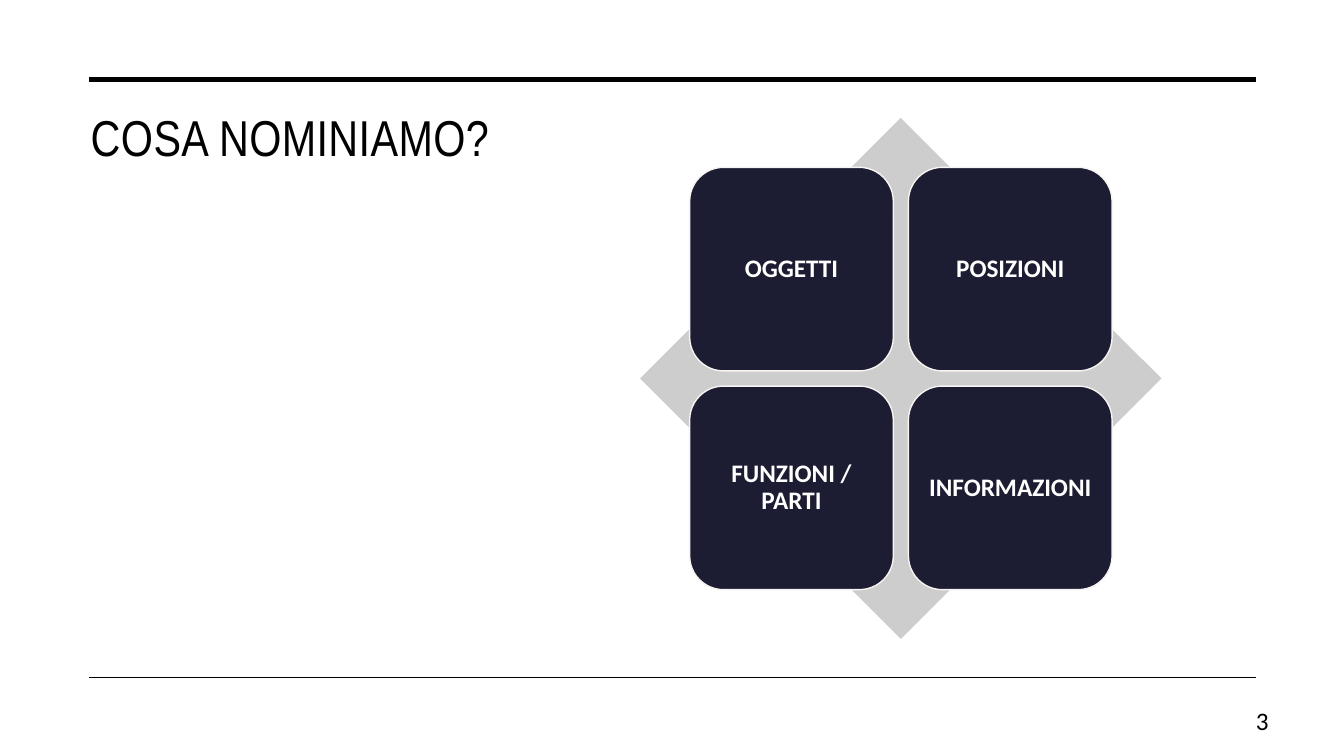
"""Build the slide on the four kinds of things we name."""
from pptx import Presentation
from pptx.dml.color import RGBColor
from pptx.enum import shapes as sh, text as tx
from pptx.oxml.ns import qn
from pptx.util import Inches, Pt
from lxml import etree

BLACK = RGBColor(0x00, 0x00, 0x00)
WHITE = RGBColor(0xFF, 0xFF, 0xFF)
GREY = RGBColor(0xCD, 0xCD, 0xCE)
NAVY = RGBColor(0x1C, 0x1C, 0x32)
CREAM = RGBColor(0xF8, 0xF4, 0xF1)


def write(frame, words, size, face, color, align, bold=False):
    frame.word_wrap = True
    frame.vertical_anchor = tx.MSO_ANCHOR.MIDDLE
    para = frame.paragraphs[0]
    para.alignment = align
    run = para.add_run()
    run.text = words
    run.font.size = Pt(size)
    run.font.name = face
    run.font.bold = bold
    run.font.color.rgb = color
    return run


deck = Presentation()
deck.slide_width = Inches(13.33)
deck.slide_height = Inches(7.5)
slide = deck.slides.add_slide(deck.slide_layouts[5])

title = slide.shapes.title
title.left, title.top = Inches(0.8), Inches(0.99)
title.width, title.height = Inches(5.28), Inches(0.73)
run = write(title.text_frame, "COSA NOMINIAMO?", 36, "Arial Narrow", BLACK,
            tx.PP_ALIGN.LEFT)
run.font._element.set("spc", "30")

for y, width in ((0.79, 3.5), (6.72, 1)):
    rule = slide.shapes.add_connector(
        sh.MSO_CONNECTOR.STRAIGHT,
        Inches(0.88), Inches(y), Inches(12.46), Inches(y))
    rule.line.color.rgb = BLACK
    rule.line.width = Pt(width)
    etree.SubElement(rule._element.spPr, qn("a:effectLst"))

diamond = slide.shapes.add_shape(
    sh.MSO_SHAPE.DIAMOND,
    Inches(6.35), Inches(1.17), Inches(5.17), Inches(5.17))
diamond.shadow.inherit = False
diamond.fill.solid()
diamond.fill.fore_color.rgb = GREY
diamond.line.fill.background()

topics = ("OGGETTI", "POSIZIONI", "FUNZIONI / PARTI", "INFORMAZIONI")
side, step = 2.02, 2.17
for i, topic in enumerate(topics):
    row, col = divmod(i, 2)
    card = slide.shapes.add_shape(
        sh.MSO_SHAPE.ROUNDED_RECTANGLE,
        Inches(6.84 + col * step), Inches(1.66 + row * step),
        Inches(side), Inches(side))
    card.shadow.inherit = False
    card.fill.solid()
    card.fill.fore_color.rgb = NAVY
    card.line.color.rgb = CREAM
    card.line.width = Pt(1)
    frame = card.text_frame
    frame.margin_left = frame.margin_right = Inches(0.07)
    frame.margin_top = frame.margin_bottom = Inches(0.07)
    write(frame, topic, 18, "Calibri", WHITE, tx.PP_ALIGN.CENTER, True)
    frame.paragraphs[0].line_spacing = 0.9

number = slide.shapes.add_textbox(
    Inches(11.94), Inches(6.95), Inches(0.74), Inches(0.4))
write(number.text_frame, "3", 18, "Calibri", BLACK, tx.PP_ALIGN.RIGHT)

deck.save("out.pptx")
